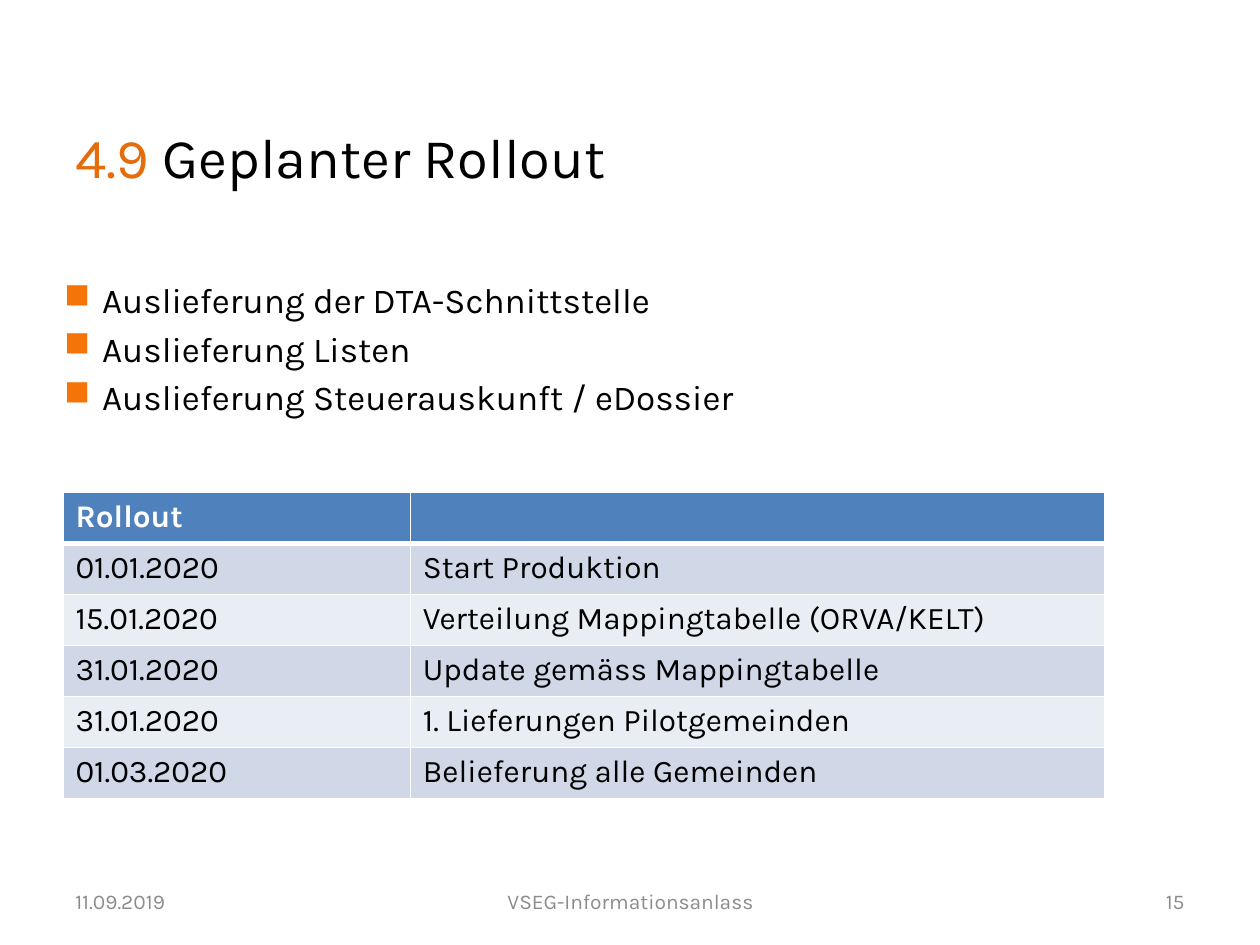
from dataclasses import dataclass

from lxml.etree import SubElement
from pptx import Presentation
from pptx.dml.color import RGBColor
from pptx.enum.text import MSO_ANCHOR, PP_ALIGN
from pptx.oxml.ns import qn
from pptx.util import Inches, Pt

WIDTH, HEIGHT = 10, 7.5
FONT = "Karla"
COLORS = {
    "text": "000000",
    "accent": "E46C0A",
    "bullet": "F4740A",
    "footer": "8C8C8C",
    "white": "FFFFFF",
    "header": "4F81BD",
    "band_dark": "D0D8E8",
    "band_light": "E9EDF4",
}


@dataclass(frozen=True)
class Area:
    """Left, top, width and height as shares of the slide."""
    left: float
    top: float
    width: float
    height: float

    def lengths(self) -> tuple:
        return (Inches(self.left * WIDTH), Inches(self.top * HEIGHT),
                Inches(self.width * WIDTH), Inches(self.height * HEIGHT))


@dataclass(frozen=True)
class FooterItem:
    text: str
    left: float
    width: float
    align: PP_ALIGN


FOOTER_TOP, FOOTER_HEIGHT = 0.927, 0.053
FOOTER = [
    FooterItem("11.09.2019", 0.05, 0.233, PP_ALIGN.LEFT),
    FooterItem("VSEG-Informationsanlass", 0.342, 0.317, PP_ALIGN.CENTER),
    FooterItem("15", 0.717, 0.233, PP_ALIGN.RIGHT),
]
TITLE = [("4.9", "accent"), (" Geplanter Rollout", "text")]
TITLE_AREA = Area(0.05, 0.123, 0.9, 0.095)
BULLETS = [
    "Auslieferung der DTA-Schnittstelle",
    "Auslieferung Listen",
    "Auslieferung Steuerauskunft / eDossier",
]
BULLET_AREA = Area(0.051, 0.3, 0.898, 0.168)
ROWS = [
    ("Rollout", ""),
    ("01.01.2020", "Start Produktion"),
    ("15.01.2020", "Verteilung Mappingtabelle (ORVA/KELT)"),
    ("31.01.2020", "Update gemäss Mappingtabelle"),
    ("31.01.2020", "1. Lieferungen Pilotgemeinden"),
    ("01.03.2020", "Belieferung alle Gemeinden"),
]
TABLE_AREA = Area(0.05, 0.521, 0.827, 0.324)
COLUMN_SHARES = (1 / 3, 2 / 3)


def color(name: str) -> RGBColor:
    return RGBColor.from_string(COLORS[name])


def set_font(para, size: float, color_name: str = "text", bold: bool = False) -> None:
    font = para.font
    font.name, font.size, font.bold = FONT, Pt(size), bold
    font.color.rgb = color(color_name)


def add_text_frame(page, area: Area):
    frame = page.shapes.add_textbox(*area.lengths()).text_frame
    frame.word_wrap = True
    return frame


def add_footer_item(page, item: FooterItem) -> None:
    frame = add_text_frame(page, Area(item.left, FOOTER_TOP, item.width, FOOTER_HEIGHT))
    frame.vertical_anchor = MSO_ANCHOR.MIDDLE
    para = frame.paragraphs[0]
    para.text, para.alignment = item.text, item.align
    set_font(para, 12, "footer")


def add_title(page) -> None:
    para = add_text_frame(page, TITLE_AREA).paragraphs[0]
    set_font(para, 32)
    for text, color_name in TITLE:
        span = para.add_run()
        span.text = text
        span.font.color.rgb = color(color_name)


def add_square_bullet(para) -> None:
    properties = para._p.get_or_add_pPr()
    indent = Inches(0.3)
    properties.set("marL", str(indent))
    properties.set("indent", str(-indent))
    bullet_color = SubElement(properties, qn("a:buClr"))
    SubElement(bullet_color, qn("a:srgbClr"), val=COLORS["bullet"])
    SubElement(properties, qn("a:buChar"), char="■")


def add_bullets(page) -> None:
    frame = add_text_frame(page, BULLET_AREA)
    frame.margin_left = frame.margin_right = frame.margin_top = frame.margin_bottom = 0
    for index, text in enumerate(BULLETS):
        para = frame.add_paragraph() if index else frame.paragraphs[0]
        para.text = text
        para.line_spacing, para.space_after = 0.9, Pt(6)
        add_square_bullet(para)
        set_font(para, 20)


def set_borders(cell, bottom: float) -> None:
    properties = cell._tc.get_or_add_tcPr()
    widths = {"a:lnL": 1, "a:lnR": 1, "a:lnT": 1, "a:lnB": bottom}
    for position, (tag, width) in enumerate(widths.items()):
        line = SubElement(properties, qn(tag), w=str(Pt(width)))
        fill = SubElement(line, qn("a:solidFill"))
        SubElement(fill, qn("a:srgbClr"), val=COLORS["white"])
        properties.insert(position, line)


def add_table(page) -> None:
    area = TABLE_AREA.lengths()
    table = page.shapes.add_table(len(ROWS), len(COLUMN_SHARES), *area).table
    for column, share in zip(table.columns, COLUMN_SHARES):
        column.width = int(area[2] * share)
    for row, texts in enumerate(ROWS):
        is_header = row == 0
        band = "header" if is_header else ("band_light", "band_dark")[row % 2]
        for column, text in enumerate(texts):
            cell = table.cell(row, column)
            cell.fill.solid()
            cell.fill.fore_color.rgb = color(band)
            set_borders(cell, bottom=3 if is_header else 1)
            para = cell.text_frame.paragraphs[0]
            if text:
                para.text = text
            set_font(para, 18, "white" if is_header else "text", is_header)


def main() -> None:
    deck = Presentation()
    deck.slide_width, deck.slide_height = Inches(WIDTH), Inches(HEIGHT)
    page = deck.slides.add_slide(deck.slide_layouts[6])

    # Heading and bullet list
    add_title(page)
    add_bullets(page)
    # Rollout schedule
    add_table(page)
    # Date, event and page number
    for item in FOOTER:
        add_footer_item(page, item)

    deck.save("out.pptx")


if __name__ == "__main__":
    main()
